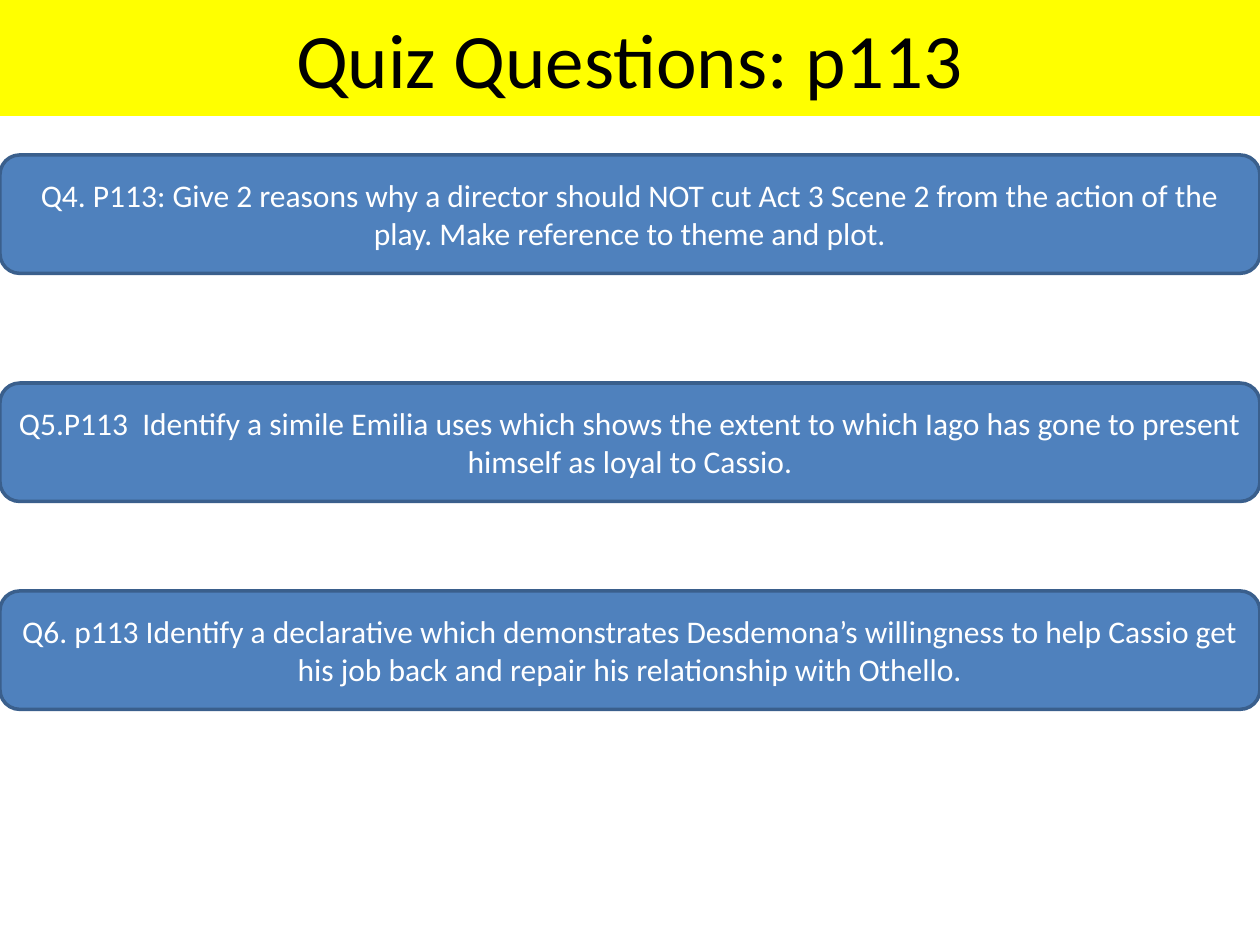
import pptx
import pptx.util
import pptx.dml.color
import pptx.enum.shapes
import pptx.enum.text

Inches = pptx.util.Inches

COLOURS = {
    "banner": "FFFF00",
    "title": "000000",
    "box": "4F81BD",
    "outline": "3A5F8C",
    "question": "FFFFFF",
}

QUESTIONS = [
    (1.23, "Q4. P113: Give 2 reasons why a director should NOT cut Act 3 Scene 2 "
           "from the action of the play. Make reference to theme and plot."),
    (3.04, "Q5.P113  Identify a simile Emilia uses which shows the extent to which "
           "Iago has gone to present himself as loyal to Cassio."),
    (4.69, "Q6. p113 Identify a declarative which demonstrates Desdemona’s willingness "
           "to help Cassio get his job back and repair his relationship with Othello."),
]


class QuizSlide:
    font = "Calibri"
    width = Inches(10)
    title_size = 44
    question_size = 18

    def __init__(self, deck):
        self.slide = deck.slides.add_slide(deck.slide_layouts[5])

    def colour(self, name):
        return pptx.dml.color.RGBColor.from_string(COLOURS[name])

    def fill(self, shape, name):
        shape.fill.solid()
        shape.fill.fore_color.rgb = self.colour(name)

    def set_text(self, shape, text, size, colour):
        frame = shape.text_frame
        frame.text = text
        frame.word_wrap = True
        frame.auto_size = pptx.enum.text.MSO_AUTO_SIZE.NONE
        frame.vertical_anchor = pptx.enum.text.MSO_ANCHOR.MIDDLE
        para = frame.paragraphs[0]
        para.alignment = pptx.enum.text.PP_ALIGN.CENTER
        span = para.runs[0]
        span.font.name = self.font
        span.font.size = pptx.util.Pt(size)
        span.font.color.rgb = self.colour(colour)

    def title(self, text):
        banner = self.slide.shapes.title
        banner.left, banner.top = Inches(0), Inches(0)
        banner.width, banner.height = self.width, Inches(0.92)
        self.fill(banner, "banner")
        self.set_text(banner, text, self.title_size, "title")

    def question(self, top, text):
        box = self.slide.shapes.add_shape(
            pptx.enum.shapes.MSO_SHAPE.ROUNDED_RECTANGLE,
            Inches(0), Inches(top), self.width, Inches(0.94))
        box.shadow.inherit = False
        self.fill(box, "box")
        box.line.color.rgb = self.colour("outline")
        box.line.width = pptx.util.Pt(2)
        self.set_text(box, text, self.question_size, "question")


def main():
    deck = pptx.Presentation()
    deck.slide_width = Inches(10)
    deck.slide_height = Inches(7.5)
    page = QuizSlide(deck)
    page.title("Quiz Questions: p113")
    for top, text in QUESTIONS:
        page.question(top, text)
    deck.save("out.pptx")


if __name__ == "__main__":
    main()
